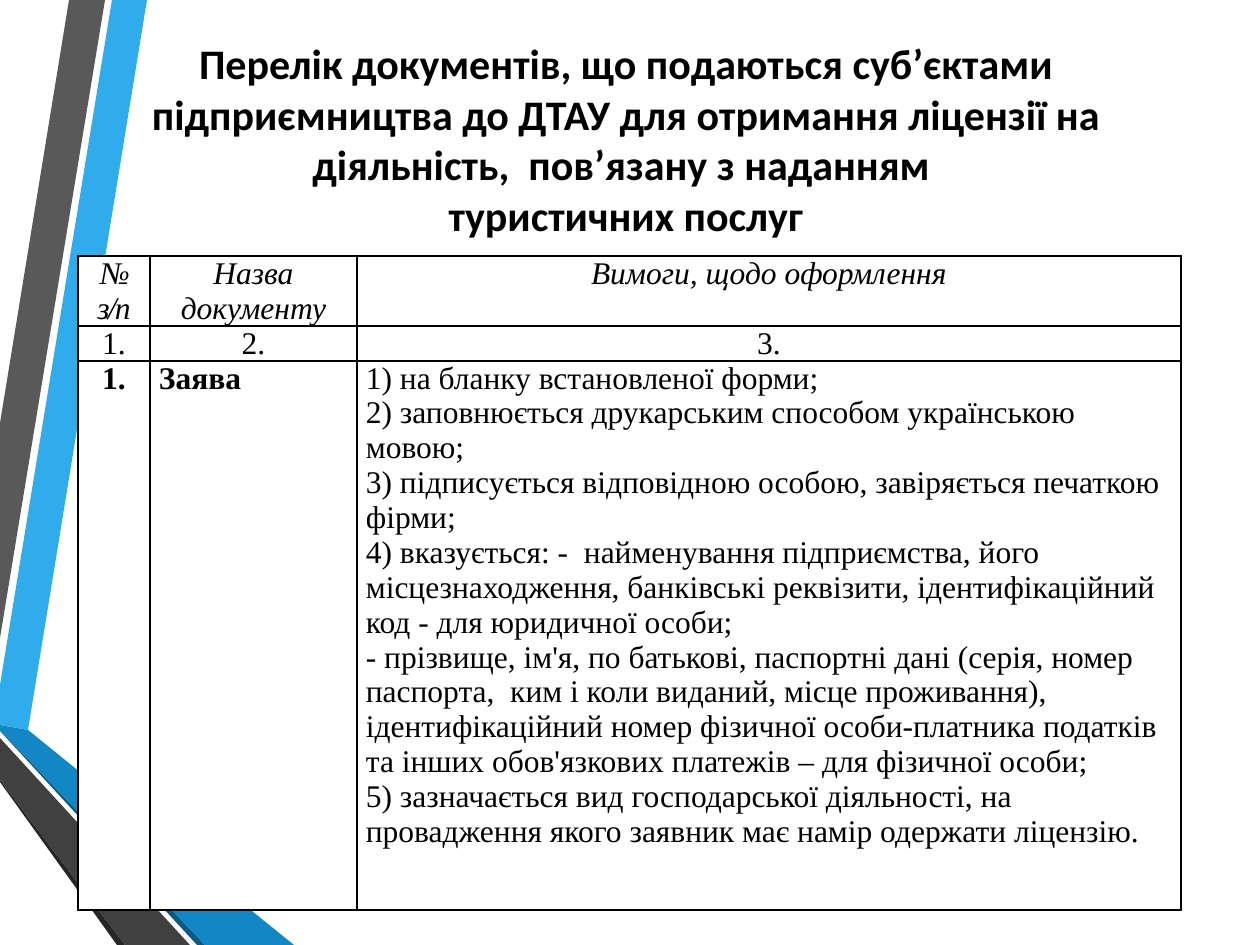
from dataclasses import dataclass

from lxml.etree import SubElement
from pptx import Presentation
from pptx.dml.color import RGBColor as Rgb
from pptx.enum.text import MSO_ANCHOR as Anchor, MSO_AUTO_SIZE as AutoSize, PP_ALIGN as Align
from pptx.oxml.ns import qn
from pptx.util import Emu, Pt

EMU_PER_PX = 914400 / 126


def px(length):
    return Emu(round(length * EMU_PER_PX))


@dataclass(frozen=True)
class Theme:
    ink: str = "000000"
    paper: str = "FFFFFF"
    sky: str = "30ACEC"
    blue: str = "1287C3"
    navy: str = "0C5A82"
    light_grey: str = "595959"
    grey: str = "404040"
    dark_grey: str = "262626"
    title_font: str = "Calibri"
    body_font: str = "Times New Roman"
    title_size: int = 24
    body_size: int = 18
    border: int = 1


class SlideBuilder:
    def __init__(self, slide, theme):
        self.slide = slide
        self.theme = theme

    def ribbon(self, points, color):
        start, *rest = points
        outline = self.slide.shapes.build_freeform(*start, scale=EMU_PER_PX)
        outline.add_line_segments(rest, close=True)
        ribbon = outline.convert_to_shape()
        ribbon.shadow.inherit = False
        ribbon.fill.solid()
        ribbon.fill.fore_color.rgb = Rgb.from_string(color)
        ribbon.line.fill.background()

    def style_runs(self, paragraph, font, size, bold=False, italic=False):
        for run in paragraph.runs:
            run.font.name = font
            run.font.size = Pt(size)
            run.font.bold = bold
            run.font.italic = italic
            run.font.color.rgb = Rgb.from_string(self.theme.ink)

    def title(self, text, left, top, width, height, bottom_inset):
        heading = self.slide.shapes.title
        heading.left, heading.top = px(left), px(top)
        heading.width, heading.height = px(width), px(height)
        frame = heading.text_frame
        frame.text = text
        frame.word_wrap = True
        frame.auto_size = AutoSize.NONE
        frame.vertical_anchor = Anchor.MIDDLE
        frame.margin_bottom = px(bottom_inset)
        paragraph = frame.paragraphs[0]
        paragraph.alignment = Align.CENTER
        self.style_runs(paragraph, self.theme.title_font, self.theme.title_size, bold=True)

    def table(self, left, top, widths, heights):
        grid = self.slide.shapes.add_table(
            len(heights), len(widths), px(left), px(top), px(sum(widths)), px(sum(heights))
        ).table
        for column, width in zip(grid.columns, widths):
            column.width = px(width)
        for row, height in zip(grid.rows, heights):
            row.height = px(height)
        return grid

    def cell(self, cell, text, align=Align.CENTER, bold=False, italic=False):
        cell.margin_left = cell.margin_right = px(9)
        cell.margin_top = cell.margin_bottom = 0
        cell.vertical_anchor = Anchor.TOP
        cell.text_frame.text = text
        for paragraph in cell.text_frame.paragraphs:
            paragraph.alignment = align
            self.style_runs(paragraph, self.theme.body_font, self.theme.body_size, bold, italic)
        self.borders(cell)
        cell.fill.solid()
        cell.fill.fore_color.rgb = Rgb.from_string(self.theme.paper)

    def borders(self, cell):
        properties = cell._tc.get_or_add_tcPr()
        for side in ("a:lnL", "a:lnR", "a:lnT", "a:lnB"):
            edge = SubElement(properties, qn(side), w=str(Pt(self.theme.border)))
            SubElement(SubElement(edge, qn("a:solidFill")), qn("a:srgbClr"), val=self.theme.ink)


TITLE = (
    "Перелік документів, що подаються суб’єктами підприємництва до ДТАУ "
    "для отримання ліцензії на діяльність,  пов’язану з наданням \vтуристичних послуг"
)
HEADERS = ("№ з/п", "Назва документу", "Вимоги, щодо оформлення")
NUMBERS = ("1.", "2.", "3.")
REQUIREMENTS = (
    "1) на бланку встановленої форми;",
    "2) заповнюється друкарським способом українською мовою;",
    "3) підписується відповідною особою, завіряється печаткою фірми;",
    "4) вказується: -  найменування підприємства, його місцезнаходження, "
    "банківські реквізити, ідентифікаційний код - для юридичної особи;",
    "- прізвище, ім'я, по батькові, паспортні дані (серія, номер паспорта,  "
    "ким і коли виданий, місце проживання), ідентифікаційний номер фізичної "
    "особи-платника податків та інших обов'язкових платежів – для фізичної особи;",
    "5) зазначається вид господарської діяльності, на провадження якого "
    "заявник має намір одержати ліцензію.",
)


def main():
    theme = Theme()
    deck = Presentation()
    deck.slide_width, deck.slide_height = px(1260), px(945)
    builder = SlideBuilder(deck.slides.add_slide(deck.slide_layouts[5]), theme)

    ribbons = (
        (theme.sky, [(0, 685), (0, 725), (28, 730), (147, 0), (112, 0)]),
        (theme.light_grey, [(105, 0), (69, 0), (0, 423), (0, 638)]),
        (theme.dark_grey, [(0, 780), (0, 782), (117, 945), (125, 945)]),
        (theme.navy, [(0, 730), (0, 731), (197, 945), (205, 945)]),
        (theme.blue, [(0, 730), (205, 945), (294, 945), (28, 730), (0, 725)]),
        (theme.grey, [(0, 780), (125, 945), (190, 945), (0, 738)]),
    )
    for color, points in ribbons:
        builder.ribbon(points, color)

    builder.title(TITLE, 59, 69, 1134, 189, bottom_inset=56)

    documents = builder.table(78, 256, (72, 207, 824), (70, 35, 549))
    for column, (header, number) in enumerate(zip(HEADERS, NUMBERS)):
        builder.cell(documents.cell(0, column), header, italic=True)
        builder.cell(documents.cell(1, column), number)
    builder.cell(documents.cell(2, 0), "1.", bold=True)
    builder.cell(documents.cell(2, 1), "Заява", Align.LEFT, bold=True)
    builder.cell(documents.cell(2, 2), "\n".join(REQUIREMENTS), Align.LEFT)

    number_header = documents.cell(0, 0).text_frame.paragraphs[0].runs[0]
    number_header.font._element.set("spc", "-100")

    deck.save("out.pptx")


if __name__ == "__main__":
    main()
